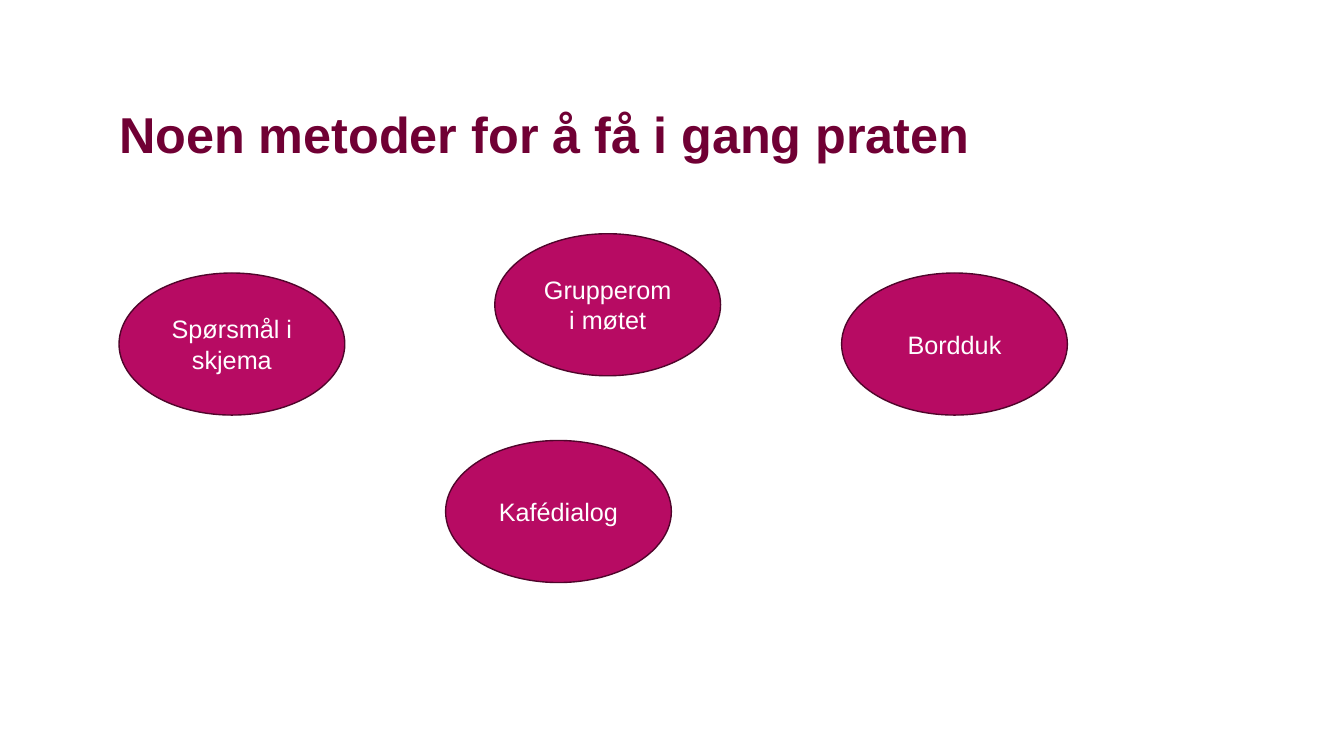
from pptx import Presentation
from pptx.dml.color import RGBColor
from pptx.enum.shapes import MSO_SHAPE
from pptx.enum.text import MSO_ANCHOR, PP_ALIGN
from pptx.util import Cm, Pt

TITLE = "Noen metoder for å få i gang praten"
METHODS = [
    ("Spørsmål i skjema", 3, 6.88),
    ("Grupperom i møtet", 12.47, 5.89),
    ("Kafédialog", 11.23, 11.1),
    ("Bordduk", 21.21, 6.88),
]
OVAL_WIDTH, OVAL_HEIGHT = Cm(5.69), Cm(3.58)

PLUM = RGBColor(0x70, 0x00, 0x34)
MAGENTA = RGBColor(0xB7, 0x0B, 0x63)
DARK_PLUM = RGBColor(0x50, 0x05, 0x2B)
WHITE = RGBColor(0xFF, 0xFF, 0xFF)


def write_text(shape, text, size, color, bold=False):
    frame = shape.text_frame
    frame.text = text
    frame.word_wrap = True
    frame.vertical_anchor = MSO_ANCHOR.MIDDLE
    para = frame.paragraphs[0]
    font = para.runs[0].font
    font.name = "Arial"
    font.size = Pt(size)
    font.bold = bold
    font.color.rgb = color
    return para


def add_title(page):
    box = page.shapes.add_textbox(Cm(3), Cm(1.37), Cm(29.21), Cm(4.17))
    frame = box.text_frame
    frame.margin_left = frame.margin_right = 0
    frame.margin_top = frame.margin_bottom = 0
    para = write_text(box, TITLE, 36, PLUM, bold=True)
    para.line_spacing = 0.9


def add_method(page, name, left, top):
    oval = page.shapes.add_shape(
        MSO_SHAPE.OVAL, Cm(left), Cm(top), OVAL_WIDTH, OVAL_HEIGHT
    )
    oval.shadow.inherit = False
    oval.fill.solid()
    oval.fill.fore_color.rgb = MAGENTA
    oval.line.color.rgb = DARK_PLUM
    oval.line.width = Pt(1)
    para = write_text(oval, name, 18, WHITE)
    para.alignment = PP_ALIGN.CENTER


def main():
    deck = Presentation()
    deck.slide_width, deck.slide_height = Cm(33.87), Cm(19.05)
    page = deck.slides.add_slide(deck.slide_layouts[6])
    add_title(page)
    for name, left, top in METHODS:
        add_method(page, name, left, top)
    deck.save("out.pptx")


if __name__ == "__main__":
    main()
